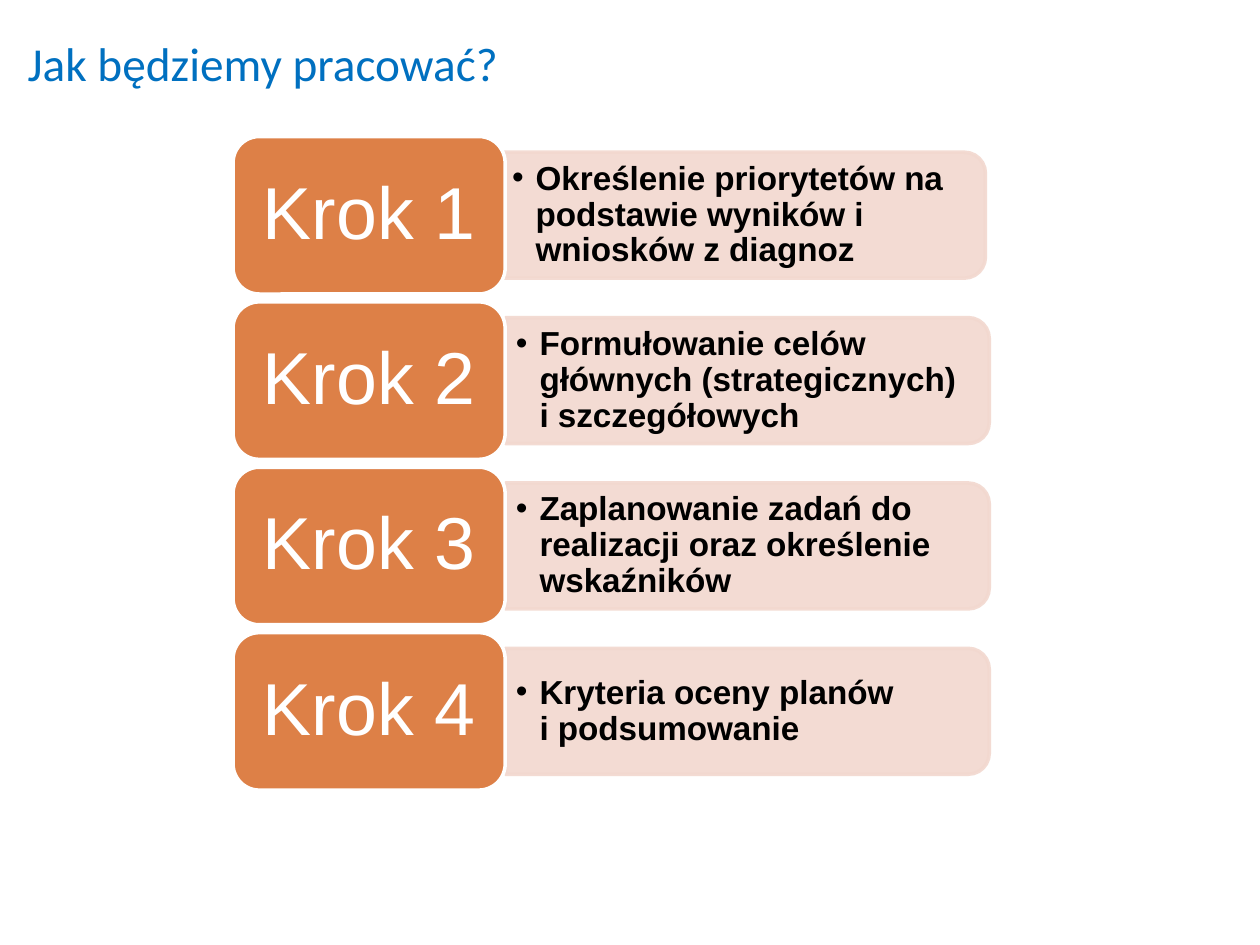
from lxml import etree
from pptx import Presentation
from pptx.dml.color import RGBColor
from pptx.enum.shapes import MSO_SHAPE
from pptx.enum.text import MSO_ANCHOR, MSO_AUTO_SIZE, PP_ALIGN
from pptx.oxml.ns import qn
from pptx.util import Pt

ROUND = MSO_SHAPE.ROUNDED_RECTANGLE
ROUND_TOP = MSO_SHAPE.ROUND_2_SAME_RECTANGLE
MIDDLE = MSO_ANCHOR.MIDDLE
NO_FIT = MSO_AUTO_SIZE.NONE
CENTER = PP_ALIGN.CENTER
JUSTIFY = PP_ALIGN.JUSTIFY

ORANGE = "DD8047"
PINK = "F2D8CF"
WHITE = "FFFFFF"
BLACK = "000000"
BLUE = "0070C0"

TILE_LEFT, TILE_TOP, TILE_W, TILE_H = 133.2, 78, 155.5, 90
PANEL_W, PANEL_H = 276.5, 72
TEXT_W, TEXT_H = 273, 65
PITCH = 94.5

STEPS = [
    (286.6, ["Określenie priorytetów na podstawie wyników i wniosków z diagnoz"]),
    (288.8, ["Formułowanie celów głównych (strategicznych)", "i szczegółowych"]),
    (288.8, ["Zaplanowanie zadań do realizacji oraz określenie wskaźników"]),
    (288.8, ["Kryteria oceny planów", "i podsumowanie"]),
]


def rgb(value):
    return RGBColor.from_string(value)


def add_box(s, kind, left, top, width, height, fill, line):
    sp = s.shapes.add_shape(kind, Pt(left), Pt(top), Pt(width), Pt(height))
    sp.shadow.inherit = False
    sp.fill.solid()
    sp.fill.fore_color.rgb = rgb(fill)
    sp.line.color.rgb = rgb(line)
    sp.line.width = Pt(2)
    return sp


def set_frame(tf, x_inset, y_inset, wrap=True):
    tf.word_wrap = wrap
    tf.auto_size = NO_FIT
    tf.vertical_anchor = MIDDLE
    tf.margin_left = tf.margin_right = Pt(x_inset)
    tf.margin_top = tf.margin_bottom = Pt(y_inset)


def add_run(p, text, size, font, color, bold=False):
    r = p.add_run()
    r.text = text
    r.font.size = Pt(size)
    r.font.name = font
    r.font.bold = bold
    r.font.color.rgb = rgb(color)


def add_bullet(p, indent):
    ppr = p._p.get_or_add_pPr()
    ppr.set("marL", str(Pt(indent)))
    ppr.set("indent", str(-Pt(indent)))
    etree.SubElement(ppr, qn("a:buFont")).set("typeface", "Arial")
    etree.SubElement(ppr, qn("a:buChar")).set("char", "•")


def add_title(s, text):
    sp = s.shapes.title
    sp.left, sp.top, sp.width, sp.height = Pt(8.6), Pt(16), Pt(291.6), Pt(40)
    set_frame(sp.text_frame, 7.2, 3.6, wrap=False)
    p = sp.text_frame.paragraphs[0]
    p.alignment = JUSTIFY
    add_run(p, text, 27, "Calibri", BLUE)


def add_panel(s, left, middle):
    center = left + PANEL_W / 2
    sp = add_box(s, ROUND_TOP, center - PANEL_H / 2, middle - PANEL_W / 2,
                 PANEL_H, PANEL_W, PINK, PINK)
    sp.rotation = 90
    for color in sp._element.spPr.iter(qn("a:srgbClr")):
        etree.SubElement(color, qn("a:alpha")).set("val", "90000")


def add_description(s, left, middle, lines):
    sp = s.shapes.add_textbox(Pt(left), Pt(middle - TEXT_H / 2), Pt(TEXT_W), Pt(TEXT_H))
    set_frame(sp.text_frame, 6, 3)
    p = sp.text_frame.paragraphs[0]
    add_bullet(p, 13.5)
    p.line_spacing = 0.9
    for i, line in enumerate(lines):
        if i:
            p.add_line_break()
        add_run(p, line, 19, "Arial", BLACK, bold=True)


def add_tile(s, top, text):
    sp = add_box(s, ROUND, TILE_LEFT, top, TILE_W, TILE_H, ORANGE, WHITE)
    set_frame(sp.text_frame, 12, 6)
    p = sp.text_frame.paragraphs[0]
    p.alignment = CENTER
    p.line_spacing = 0.9
    add_run(p, text, 42, "Arial", WHITE)


def main():
    prs = Presentation()
    prs.slide_width, prs.slide_height = Pt(720), Pt(540)
    s = prs.slides.add_slide(prs.slide_layouts[5])
    add_title(s, "Jak będziemy pracować?")
    for i, (left, lines) in enumerate(STEPS):
        top = TILE_TOP + i * PITCH
        middle = top + TILE_H / 2
        add_panel(s, left, middle)
        add_description(s, left, middle, lines)
        add_tile(s, top, f"Krok {i + 1}")
    prs.save("out.pptx")


if __name__ == "__main__":
    main()
